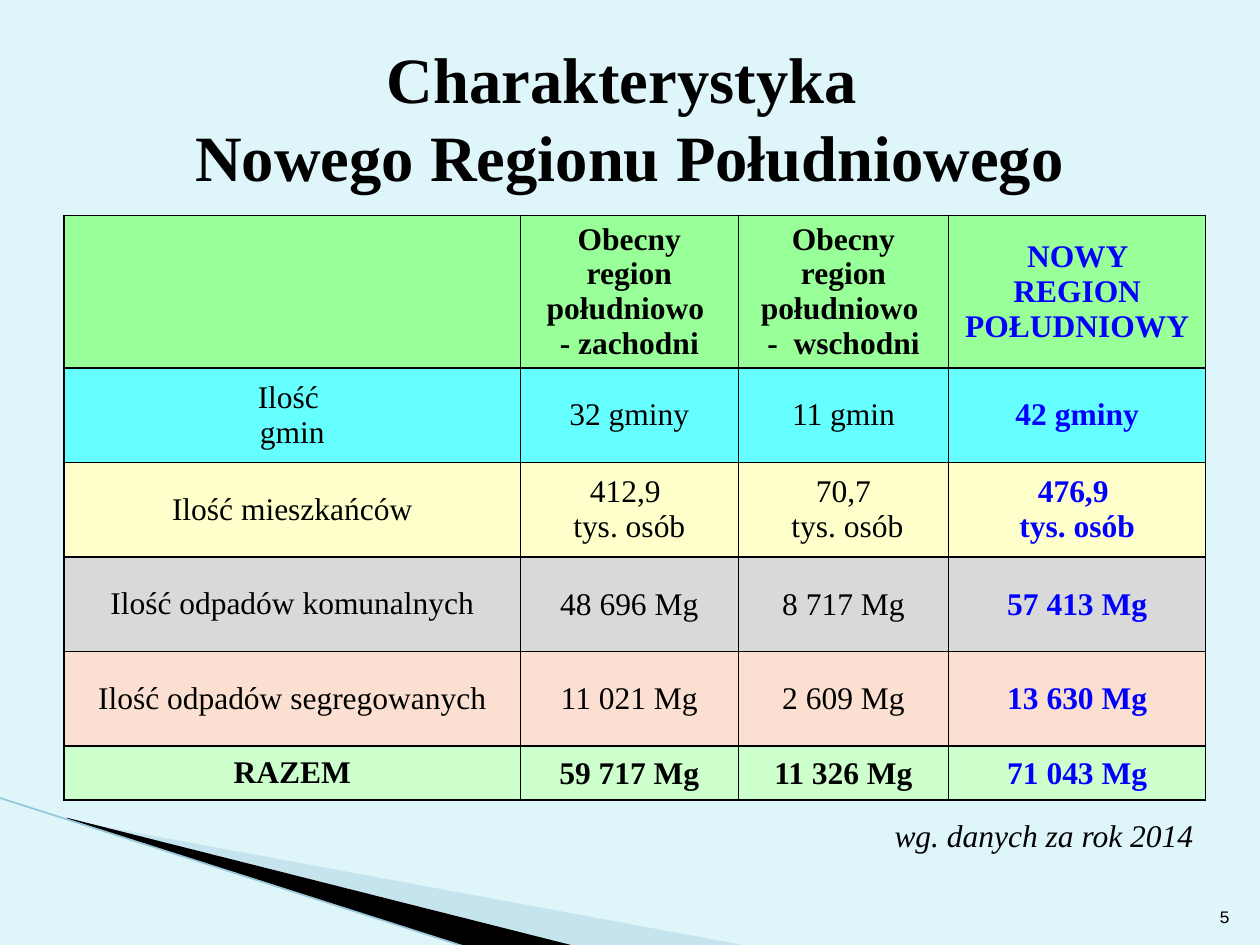
from dataclasses import dataclass

import pptx
import pptx.dml.color
import pptx.enum.shapes
import pptx.enum.text
import pptx.oxml
import pptx.oxml.ns
import pptx.util
from pptx.util import Inches

ALIGN = pptx.enum.text.PP_ALIGN
ANCHOR = pptx.enum.text.MSO_ANCHOR


@dataclass(frozen=True)
class Theme:
    serif: str = "Times New Roman"
    mono: str = "Courier New"
    title_size: float = 36.9
    body_size: float = 18
    number_size: float = 10
    background: str = "DEF5FA"
    ink: str = "000000"
    accent: str = "0000FF"
    wedge: str = "A0CBDC"
    edge: str = "97C5D8"
    row_fills: tuple = ("99FF99", "66FFFF", "FFFFCC", "D9D9D9", "FBE0D1", "CCFFCC")


THEME = Theme()

COLUMN_WIDTHS = (3.62, 1.73, 1.67, 2.04)
ROW_HEIGHTS = (1.21, 0.75, 0.75, 0.75, 0.75, 0.43)
ROWS = (
    ("", "Obecny region południowo \n- zachodni",
     "Obecny region południowo \n-  wschodni", "NOWY REGION POŁUDNIOWY"),
    ("Ilość \ngmin", "32 gminy", "11 gmin", "42 gminy"),
    ("Ilość mieszkańców", "412,9 \ntys. osób", "70,7\n tys. osób", "476,9 \ntys. osób"),
    ("Ilość odpadów komunalnych", "48 696 Mg", "8 717 Mg", "57 413 Mg"),
    ("Ilość odpadów segregowanych", "11 021 Mg", "2 609 Mg", "13 630 Mg"),
    ("RAZEM", "59 717 Mg", "11 326 Mg", "71 043 Mg"),
)
FIRST_WEIGHT_ROW = 3


def rgb(value):
    return pptx.dml.color.RGBColor.from_string(value)


def write(para, text, size, align, color=THEME.ink, font=THEME.serif, bold=False, italic=False):
    para.text = text
    para.alignment = align
    for span in para.runs:
        span.font.name = font
        span.font.size = pptx.util.Pt(size)
        span.font.bold = bold
        span.font.italic = italic
        span.font.color.rgb = rgb(color)


def add_text(page, box, text, size, align, anchor=ANCHOR.TOP, **style):
    shape = page.shapes.add_textbox(*map(Inches, box))
    frame = shape.text_frame
    frame.word_wrap = True
    frame.vertical_anchor = anchor
    write(frame.paragraphs[0], text, size, align, **style)


def add_wedge(page, points, color, opacity=100):
    corners = [(Inches(x), Inches(y)) for x, y in points]
    builder = page.shapes.build_freeform(*corners[0])
    builder.add_line_segments(corners[1:], close=True)
    shape = builder.convert_to_shape()
    shape.shadow.inherit = False
    shape.line.fill.background()
    shape.fill.solid()
    shape.fill.fore_color.rgb = rgb(color)
    if opacity < 100:
        tint = shape.fill._xPr.find(".//" + pptx.oxml.ns.qn("a:srgbClr"))
        alpha = pptx.oxml.ns.qn("a:alpha")
        tint.append(tint.makeelement(alpha, {"val": str(opacity * 1000)}))


def add_corner(page, box):
    """Place the folded corner inside the box, measured from its top left."""
    left, top, width, height = box

    def place(points):
        return [(left + x, top + y) for x, y in points]

    add_wedge(page, place([(0.56, 0.18), (width, height - 0.01),
                           (4.57, height - 0.01), (0.56, 0.17)]), THEME.wedge, 40)
    add_wedge(page, place([(0.54, 0.16), (4.58, height - 0.01),
                           (3.73, height), (0.55, 0.17)]), THEME.ink)
    edge = page.shapes.add_connector(
        pptx.enum.shapes.MSO_CONNECTOR.STRAIGHT, Inches(left), Inches(top),
        Inches(left + 3.72), Inches(top + height))
    edge.line.color.rgb = rgb(THEME.edge)
    edge.line.width = pptx.util.Pt(0.95)
    properties = edge._element.spPr
    properties.append(properties.makeelement(pptx.oxml.ns.qn("a:effectLst"), {}))


def add_borders(cell):
    """Draw the four cell borders; they must precede the fill."""
    properties = cell._tc.get_or_add_tcPr()
    for index, side in enumerate(("lnL", "lnR", "lnT", "lnB")):
        properties.insert(index, pptx.oxml.parse_xml(
            f'<a:{side} {pptx.oxml.ns.nsdecls("a")} w="12700"><a:solidFill>'
            f'<a:srgbClr val="{THEME.ink}"/></a:solidFill></a:{side}>'))


def add_region_table(page, box):
    table = page.shapes.add_table(len(ROWS), len(COLUMN_WIDTHS), *map(Inches, box)).table
    for column, width in zip(table.columns, COLUMN_WIDTHS):
        column.width = Inches(width)
    for row, height in zip(table.rows, ROW_HEIGHTS):
        row.height = Inches(height)
    last_row, last_column = len(ROWS) - 1, len(COLUMN_WIDTHS) - 1
    for row, texts in enumerate(ROWS):
        for column, text in enumerate(texts):
            cell = table.cell(row, column)
            cell.fill.solid()
            cell.fill.fore_color.rgb = rgb(THEME.row_fills[row])
            add_borders(cell)
            cell.vertical_anchor = ANCHOR.MIDDLE
            if row >= FIRST_WEIGHT_ROW and column > 0:
                cell.margin_left = cell.margin_right = cell.margin_top = Inches(0.01)
                cell.margin_bottom = 0
            is_new = column == last_column
            write(cell.text_frame.paragraphs[0], text, THEME.body_size, ALIGN.CENTER,
                  color=THEME.accent if is_new else THEME.ink,
                  bold=is_new or row in (0, last_row))


def build_region_slide(deck):
    page = deck.slides.add_slide(deck.slide_layouts[6])
    page.background.fill.solid()
    page.background.fill.fore_color.rgb = rgb(THEME.background)
    add_corner(page, (-0.01, 6.33, 5.96, 1.19))
    add_region_table(page, (0.51, 1.71, sum(COLUMN_WIDTHS), sum(ROW_HEIGHTS)))
    add_text(page, (0.5, 0.3, 9, 1.25), "Charakterystyka \nNowego Regionu Południowego",
             THEME.title_size, ALIGN.CENTER, ANCHOR.MIDDLE, bold=True)
    add_text(page, (3.66, 6.43, 5.91, 0.4), "wg. danych za rok 2014",
             THEME.body_size, ALIGN.RIGHT, italic=True)
    add_text(page, (9.46, 7.01, 0.4, 0.4), "5", THEME.number_size, ALIGN.RIGHT,
             ANCHOR.BOTTOM, font=THEME.mono)


def main():
    deck = pptx.Presentation()
    deck.slide_width, deck.slide_height = Inches(10), Inches(7.5)
    build_region_slide(deck)
    deck.save("out.pptx")


if __name__ == "__main__":
    main()
